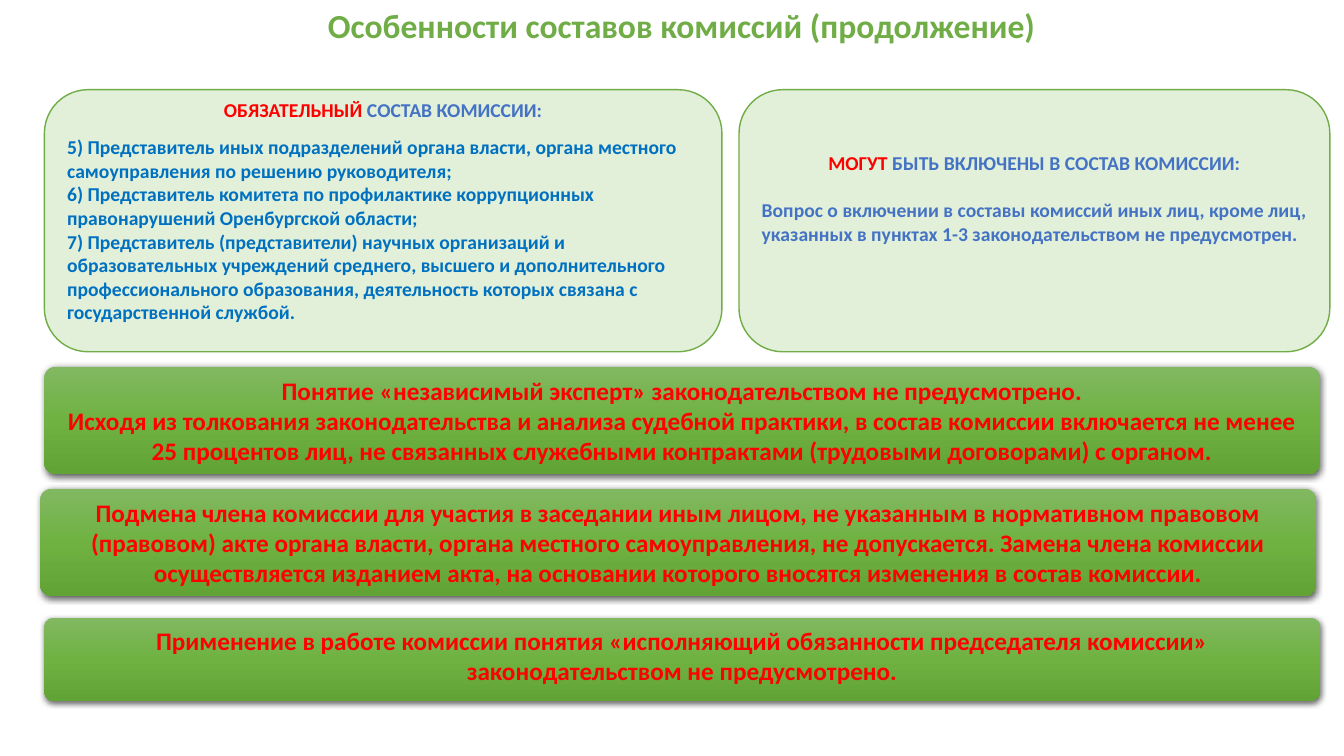
import copy

from lxml import etree
from pptx import Presentation
from pptx import util as u
from pptx.dml.color import RGBColor
from pptx.enum import shapes, text
from pptx.oxml import ns

GREEN, RED, BLUE, SKY = "70AD47", "FF0000", "4472C4", "0070C0"
LEFT, CENTER = text.PP_ALIGN.LEFT, text.PP_ALIGN.CENTER


def rgb(value):
    return RGBColor.from_string(value)


def add_text(p, *parts, size=14, align=LEFT, after=0):
    """Fill a paragraph with bold (text, colour) runs."""
    p.alignment = align
    p.space_before, p.space_after = u.Pt(0), u.Pt(after)
    for words, color in parts:
        r = p.add_run()
        r.text = words
        r.font.name, r.font.size, r.font.bold = "Calibri", u.Pt(size), True
        r.font.color.rgb = rgb(color)


def add_box(s, box):
    sp = s.shapes.add_shape(shapes.MSO_SHAPE.ROUNDED_RECTANGLE,
                            *(u.Inches(v) for v in box))
    sp.shadow.inherit = False
    sp.text_frame.word_wrap = True
    return sp


def add_title(s, box, words):
    sp = s.shapes.title
    sp.left, sp.top, sp.width, sp.height = (u.Inches(v) for v in box)
    tf = sp.text_frame
    tf.auto_size = text.MSO_AUTO_SIZE.NONE
    tf.vertical_anchor = text.MSO_ANCHOR.TOP
    add_text(tf.paragraphs[0], (words, GREEN), size=24, align=CENTER)


def add_panel(s, box, heading, items, color, gap, bottom):
    """Pale panel: two-colour heading above left-aligned items."""
    sp = add_box(s, box)
    sp.fill.solid()
    sp.fill.fore_color.rgb = rgb("E2F0D9")
    sp.line.color.rgb = rgb(GREEN)
    sp.line.width = u.Pt(1)
    tf = sp.text_frame
    tf.vertical_anchor = text.MSO_ANCHOR.MIDDLE
    tf.margin_top, tf.margin_bottom = 0, u.Inches(bottom)
    key, rest = heading
    add_text(tf.paragraphs[0], (key, RED), (rest, BLUE), align=CENTER, after=gap)
    for item in items:
        add_text(tf.add_paragraph(), (item, color))


def add_gradient(sp):
    sp.fill.gradient()
    sp.fill.gradient_angle = 270
    stops = sp._element.spPr.find(".//" + ns.qn("a:gsLst"))
    stops.insert(1, copy.deepcopy(stops[0]))
    colors = ("81B861", "6FB242", "62A336")
    for i, (stop, color) in enumerate(zip(sp.fill.gradient_stops, colors)):
        stop.position = i / 2
        stop.color.rgb = rgb(color)


def add_shadow(sp):
    effects = sp._element.spPr.find(ns.qn("a:effectLst"))
    shadow = etree.SubElement(effects, ns.qn("a:outerShdw"), blurRad=str(u.Pt(4.5)),
                              dist=str(u.Pt(1.5)), dir="5400000", rotWithShape="0")
    color = etree.SubElement(shadow, ns.qn("a:srgbClr"), val="000000")
    etree.SubElement(color, ns.qn("a:alpha"), val="63000")


def add_bar(s, box, lines):
    """Green gradient bar with centred red text."""
    sp = add_box(s, box)
    sp.adjustments[0] = 0.1
    add_gradient(sp)
    add_shadow(sp)
    sp.line.fill.background()
    tf = sp.text_frame
    tf.vertical_anchor = text.MSO_ANCHOR.TOP
    for i, line in enumerate(lines):
        p = tf.add_paragraph() if i else tf.paragraphs[0]
        add_text(p, (line, RED), size=18, align=CENTER)


def main():
    prs = Presentation()
    prs.slide_width, prs.slide_height = u.Inches(13.33), u.Inches(7.5)
    s = prs.slides.add_slide(prs.slide_layouts[5])
    add_title(s, (0.71, 0, 12.1, 0.5), "Особенности составов комиссий (продолжение)")

    # Commission members
    add_panel(s, (0.44, 0.89, 6.72, 2.6), ("ОБЯЗАТЕЛЬНЫЙ", " СОСТАВ КОМИССИИ:"), [
        "5) Представитель иных подразделений органа власти, органа местного "
        "самоуправления по решению руководителя;",
        "6) Представитель комитета по профилактике коррупционных "
        "правонарушений Оренбургской области;",
        "7) Представитель (представители) научных организаций и образовательных "
        "учреждений среднего, высшего и дополнительного профессионального "
        "образования, деятельность которых связана с государственной службой.",
    ], SKY, gap=10, bottom=0.2)
    add_panel(s, (7.33, 0.89, 5.86, 2.6), ("МОГУТ", " БЫТЬ ВКЛЮЧЕНЫ В СОСТАВ КОМИССИИ:"), [
        "Вопрос о включении в составы комиссий иных лиц, кроме лиц, "
        "указанных в пунктах 1-3 законодательством не предусмотрен.",
    ], BLUE, gap=17, bottom=0.45)

    # Notes on the law
    bars = [
        (0.44, 3.64, 1.06, [
            "Понятие «независимый эксперт» законодательством не предусмотрено.",
            "Исходя из толкования законодательства и анализа судебной практики, "
            "в состав комиссии включается не менее 25 процентов лиц, не связанных "
            "служебными контрактами (трудовыми договорами) с органом."]),
        (0.4, 4.85, 1.06, [
            "Подмена члена комиссии для участия в заседании иным лицом, не указанным "
            "в нормативном правовом (правовом) акте органа власти, органа местного "
            "самоуправления, не допускается. Замена члена комиссии осуществляется "
            "изданием акта, на основании которого вносятся изменения в состав комиссии."]),
        (0.44, 6.13, 0.82, [
            "Применение в работе комиссии понятия «исполняющий обязанности "
            "председателя комиссии» законодательством не предусмотрено."]),
    ]
    for left, top, height, lines in bars:
        add_bar(s, (left, top, 12.65, height), lines)
    prs.save("out.pptx")


if __name__ == "__main__":
    main()
